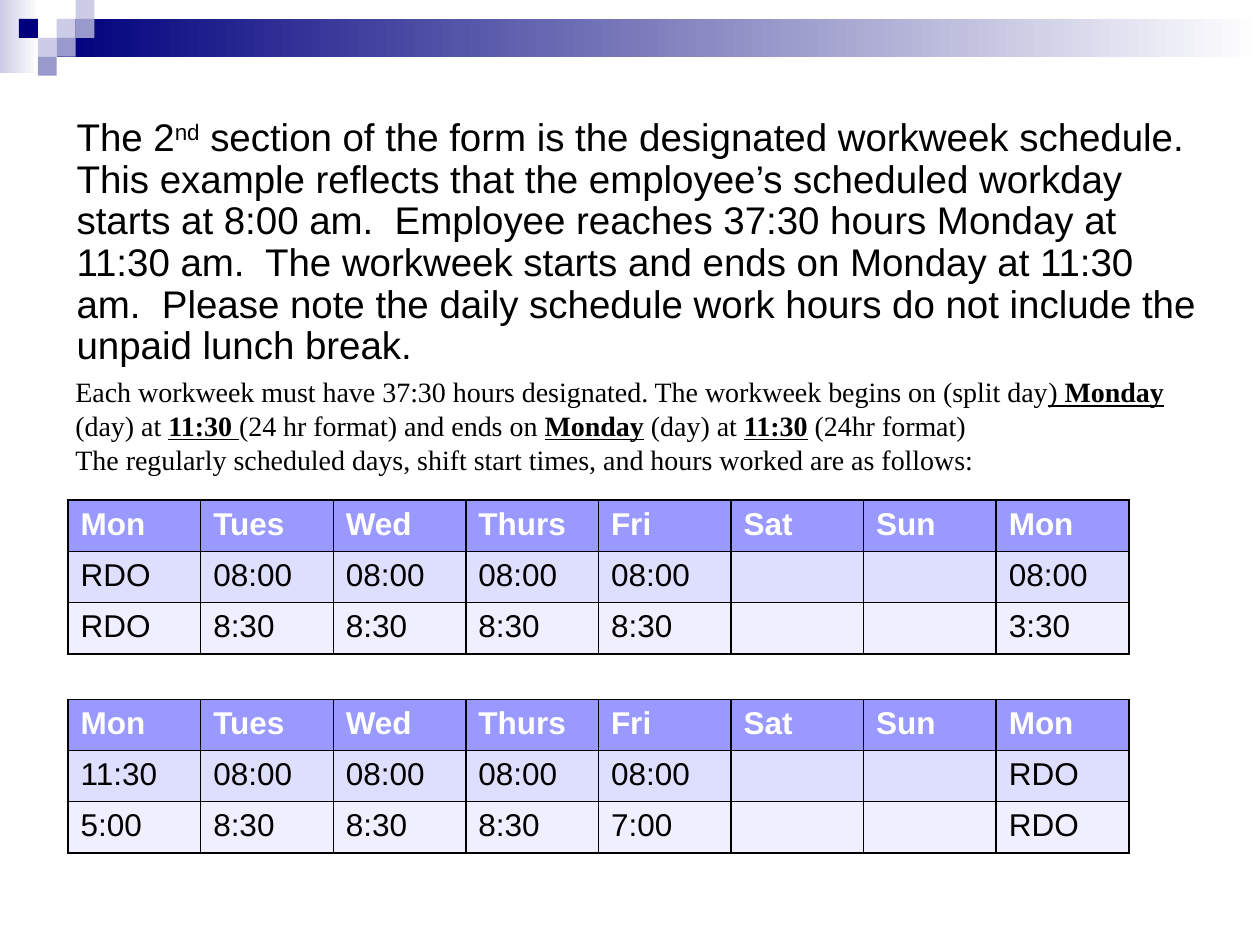
from lxml.etree import SubElement
from pptx import Presentation
from pptx.dml.color import RGBColor
from pptx.enum.shapes import MSO_SHAPE as Shape
from pptx.enum.text import MSO_ANCHOR as Anchor
from pptx.oxml import parse_xml
from pptx.oxml.ns import nsdecls, qn
from pptx.util import Inches, Pt

NAVY, LAVENDER, PERIWINKLE = "00007D", "CCCCE6", "9999CC"
BLACK, WHITE = "000000", "FFFFFF"
ROW_FILLS = ["9999FF", "DEDEFF", "EFEFFF"]
COLUMNS, ROWS = 100, 75
TILE = 1.5

# (column, row, colour) of each tile in the corner mosaic
TILES = [
    (3, 1, LAVENDER), (4, 0, LAVENDER), (4, 1, PERIWINKLE), (2, 2, LAVENDER),
    (1, 1, NAVY), (3, 2, PERIWINKLE), (2, 3, PERIWINKLE),
]

# (text, style); the style letters are b bold, u underlined, s superscript
RULES = [
    [
        ("Each workweek must have 37:30 hours designated. The workweek begins on (split day", ""),
        (")", "u"), (" Monday ", "bu"), ("(day) at ", ""), ("11:30 ", "bu"),
        ("(24 hr format) and ends on ", ""), ("Monday", "bu"), (" (day) at ", ""),
        ("11:30", "bu"), (" (24hr format)", ""),
    ],
    [("The regularly scheduled days, shift start times, and hours worked are as follows:", "")],
]
EXPLANATION = [[
    ("The 2", ""), ("nd", "s"),
    (" section of the form is the designated workweek schedule.  This example reflects that "
     "the employee’s scheduled workday starts at 8:00 am.  Employee reaches 37:30 hours Monday "
     "at 11:30 am.  The workweek starts and ends on Monday at 11:30 am.  Please note the daily "
     "schedule work hours do not include the unpaid lunch break.", ""),
]]

DAYS = ["Mon", "Tues", "Wed", "Thurs", "Fri", "Sat", "Sun", "Mon"]
STARTS = ["08:00"] * 4 + ["", ""]
FIRST_WEEK = [
    DAYS,
    ["RDO", *STARTS, "08:00"],
    ["RDO", "8:30", "8:30", "8:30", "8:30", "", "", "3:30"],
]
SECOND_WEEK = [
    DAYS,
    ["11:30", *STARTS, "RDO"],
    ["5:00", "8:30", "8:30", "8:30", "7:00", "", "", "RDO"],
]


def color(value):
    return RGBColor.from_string(value)


class SlideBuilder:
    """Draws on one slide; places are (left, top, width, height) in grid columns and rows."""

    def __init__(self, presentation):
        self.column = presentation.slide_width / COLUMNS
        self.row = presentation.slide_height / ROWS
        self.slide = presentation.slides.add_slide(presentation.slide_layouts[6])

    def place(self, left, top, width, height):
        return (round(left * self.column), round(top * self.row),
                round(width * self.column), round(height * self.row))

    def rectangle(self, place, fill, fade_to=None):
        shape = self.slide.shapes.add_shape(Shape.RECTANGLE, *self.place(*place))
        shape.shadow.inherit = False
        shape.line.fill.background()
        if fade_to:
            shape.fill.gradient()
            shape.fill.gradient_angle = 0
            for stop, value in zip(shape.fill.gradient_stops, (fill, fade_to)):
                stop.color.rgb = color(value)
        else:
            shape.fill.solid()
            shape.fill.fore_color.rgb = color(fill)

    def format_run(self, run, font, size, value, style=""):
        run.font.name = font
        run.font.size = Pt(size)
        run.font.color.rgb = color(value)
        run.font.bold = "b" in style
        run.font.underline = "u" in style
        if "s" in style:
            run.font._element.set("baseline", "30000")

    def text(self, place, paragraphs, font, size, anchor, line_spacing=1.0):
        frame = self.slide.shapes.add_textbox(*self.place(*place)).text_frame
        frame.word_wrap = True
        frame.vertical_anchor = anchor
        for index, runs in enumerate(paragraphs):
            paragraph = frame.add_paragraph() if index else frame.paragraphs[0]
            paragraph.line_spacing = line_spacing
            for words, style in runs:
                run = paragraph.add_run()
                run.text = words
                self.format_run(run, font, size, BLACK, style)

    def border(self, cell):
        properties = cell._tc.get_or_add_tcPr()
        for index, side in enumerate("LRTB"):
            line = parse_xml(f'<a:ln{side} {nsdecls("a")} w="12700"/>')
            fill = SubElement(line, qn("a:solidFill"))
            SubElement(fill, qn("a:srgbClr")).set("val", BLACK)
            properties.insert(index, line)

    def table(self, place, rows):
        frame = self.slide.shapes.add_table(len(rows), len(rows[0]), *self.place(*place))
        for row_index, (row, fill) in enumerate(zip(rows, ROW_FILLS)):
            value, style = (BLACK, "") if row_index else (WHITE, "b")
            for column_index, words in enumerate(row):
                cell = frame.table.cell(row_index, column_index)
                cell.fill.solid()
                cell.fill.fore_color.rgb = color(fill)
                self.border(cell)
                cell.text_frame.text = words
                for run in cell.text_frame.paragraphs[0].runs:
                    self.format_run(run, "Arial", 18, value, style)


def main():
    presentation = Presentation()
    presentation.slide_width, presentation.slide_height = Inches(10), Inches(7.5)
    builder = SlideBuilder(presentation)

    builder.rectangle((0, 0, 3.1, 5.8), LAVENDER, fade_to=WHITE)
    builder.rectangle((4.5, 1.5, 95.5, 3), NAVY, fade_to=WHITE)
    for column, row, fill in TILES:
        builder.rectangle((column * TILE, row * TILE, TILE, TILE), fill)

    builder.text((5, 29.2, 91.8, 9.1), RULES, "Times New Roman", 16, Anchor.MIDDLE)
    builder.text((5.1, 5.2, 91.7, 24.5), EXPLANATION, "Arial", 22, Anchor.BOTTOM, 0.9)
    for top, week in ((39.7, FIRST_WEEK), (55.5, SECOND_WEEK)):
        builder.table((5.4, top, 84.2, 12.2), week)

    presentation.save("out.pptx")


if __name__ == "__main__":
    main()
